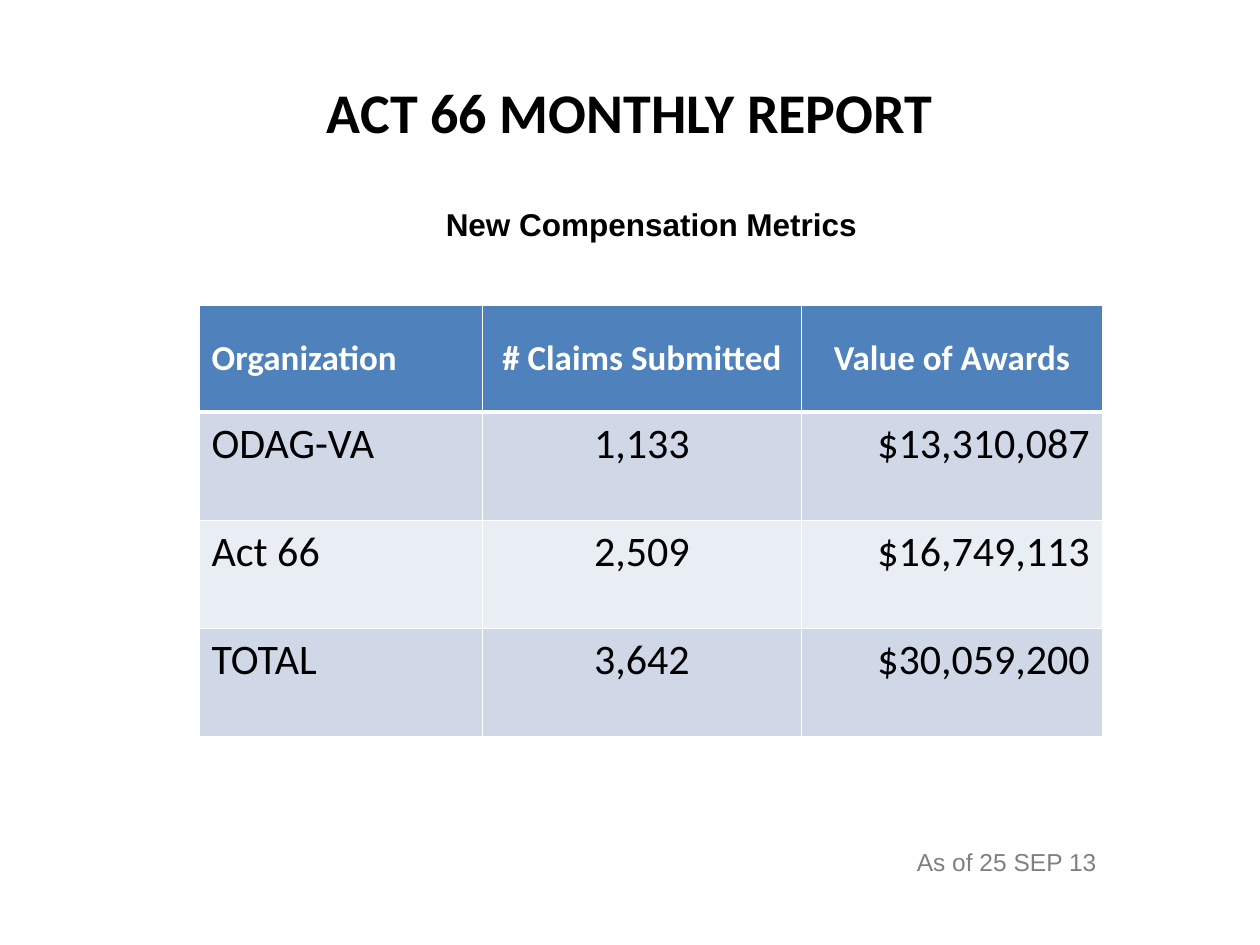
from pptx import Presentation
from pptx.dml.color import RGBColor
from pptx.enum import text
from pptx.oxml import parse_xml
from pptx.oxml.ns import nsdecls
from pptx.util import Inches, Pt

# Content
TITLE = "ACT 66 MONTHLY REPORT"
HEAD = "New Compensation Metrics "
DATE = "As of 25 SEP 13"
ROWS = [
    ("Organization", "# Claims Submitted", "Value of Awards"),
    ("ODAG-VA", "1,133", "$13,310,087"),
    ("Act 66", "2,509", "$16,749,113"),
    ("TOTAL", "3,642", "$30,059,200"),
]
WIDTHS = (2.25, 2.53, 2.39)
HEIGHTS = (0.85, 0.86, 0.86, 0.86)
BANDS = ("D0D8E8", "E9EDF4")
ALIGN = text.PP_ALIGN
SIDES = (ALIGN.LEFT, ALIGN.CENTER, ALIGN.RIGHT)


def tint(code):
    return RGBColor.from_string(code)


def write(frame, words, size, font, color, bold=False, align=ALIGN.CENTER):
    para = frame.paragraphs[0]
    para.alignment = align
    run = para.add_run()
    run.text = words
    run.font.size = Pt(size)
    run.font.name = font
    run.font.bold = bold
    run.font.color.rgb = tint(color)
    return para


def label(slide, box, words, size, color, bold=False):
    frame = slide.shapes.add_textbox(*map(Inches, box)).text_frame
    frame.word_wrap = False
    frame.auto_size = text.MSO_AUTO_SIZE.SHAPE_TO_FIT_TEXT
    return write(frame, words, size, "Arial", color, bold)


def edge(cell, base):
    """Draw white borders; base is the width of the bottom one in points."""
    props = cell._tc.get_or_add_tcPr()
    lines = (("lnL", 1), ("lnR", 1), ("lnT", 1), ("lnB", base))
    for spot, (tag, width) in enumerate(lines):
        props.insert(spot, parse_xml(
            f'<a:{tag} {nsdecls("a")} w="{Pt(width)}"><a:solidFill>'
            f'<a:srgbClr val="FFFFFF"/></a:solidFill></a:{tag}>'))


def main():
    deck = Presentation()
    deck.slide_width, deck.slide_height = Inches(10), Inches(7.5)
    slide = deck.slides.add_slide(deck.slide_layouts[5])

    # Title
    title = slide.shapes.title
    title.left, title.top = Inches(0.5), Inches(0.42)
    title.width, title.height = Inches(9), Inches(0.92)
    title.text_frame.vertical_anchor = text.MSO_ANCHOR.MIDDLE
    write(title.text_frame, TITLE, 32, "Calibri", "000000", True)

    # Table
    table = slide.shapes.add_table(
        len(ROWS), len(WIDTHS), Inches(1.58), Inches(2.42),
        Inches(sum(WIDTHS)), Inches(sum(HEIGHTS))).table
    for col, width in zip(table.columns, WIDTHS):
        col.width = Inches(width)
    for r, (row, height) in enumerate(zip(ROWS, HEIGHTS)):
        table.rows[r].height = Inches(height)
        for c, words in enumerate(row):
            cell = table.cell(r, c)
            cell.fill.solid()
            if r == 0:
                cell.fill.fore_color.rgb = tint("4F81BD")
                cell.vertical_anchor = text.MSO_ANCHOR.MIDDLE
                side = ALIGN.CENTER if c else ALIGN.LEFT
                write(cell.text_frame, words, 20, "Calibri", "FFFFFF", True, side)
            else:
                cell.fill.fore_color.rgb = tint(BANDS[(r - 1) % 2])
                write(cell.text_frame, words, 24, "Calibri", "000000", False, SIDES[c])
            edge(cell, 1 if r else 3)

    # Heading and date
    label(slide, (3.42, 1.58, 3.57, 0.4), HEAD, 18, "000000", True)
    date = label(slide, (7.17, 6.67, 1.64, 0.34), DATE, 14, "808080")
    date.space_before = Pt(7)

    deck.save("out.pptx")


if __name__ == "__main__":
    main()
